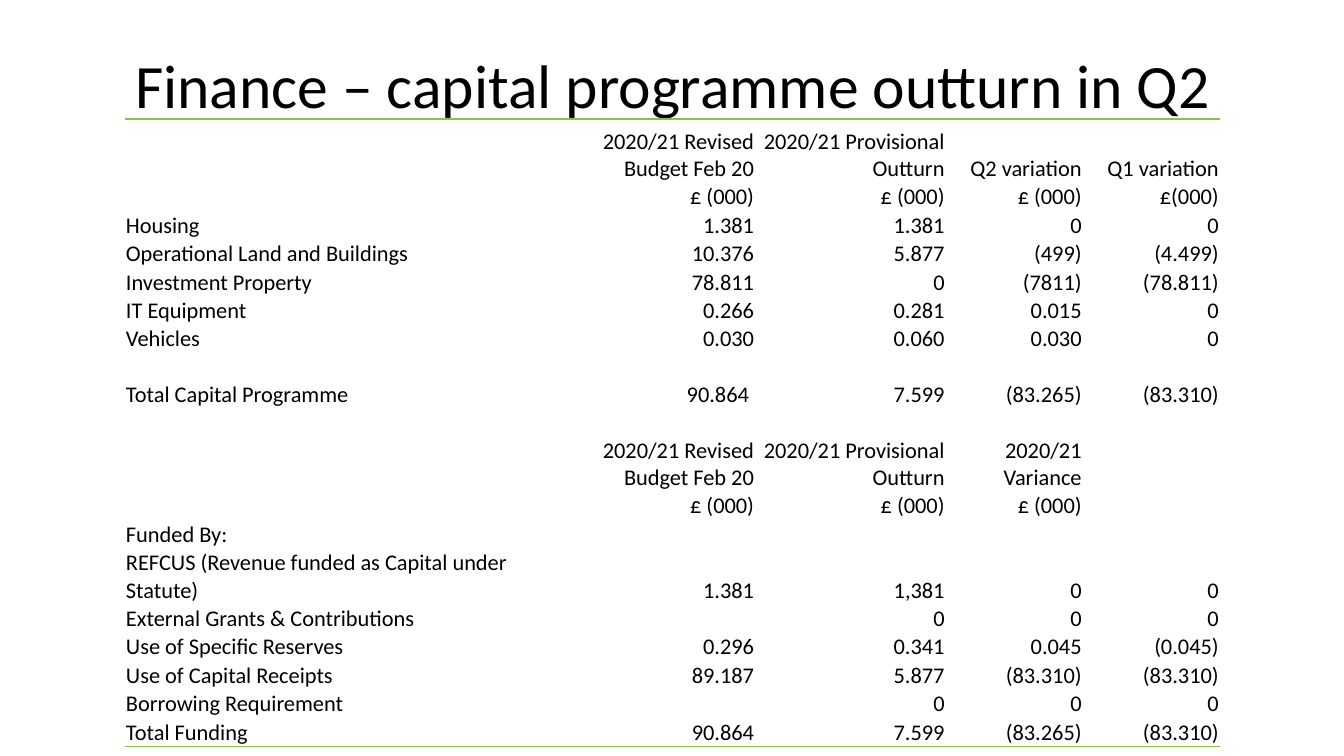
from lxml.etree import SubElement as Sub
from pptx import Presentation as Deck
from pptx.dml.color import RGBColor as RGB
from pptx.enum.text import MSO_ANCHOR as Anchor, MSO_AUTO_SIZE as Auto, PP_ALIGN as Align
from pptx.oxml import parse_xml as to_xml
from pptx.oxml.ns import nsdecls, qn
from pptx.util import Inches, Pt

BLACK = RGB(0x00, 0x00, 0x00)
GREEN = RGB(0x8B, 0xC1, 0x45)
FONT = "Calibri"
PLAIN = "{2D5ABB26-0587-4C30-8999-92F81FD0307C}"

COLS = [33.38, 13.5, 14.18, 10.2, 10.2]
LINE = 3.6
TALL = {0: 8.4, 6: 1.87, 10: 7.07, 13: 5.07}

HEAD = ["", "2020/21 Revised Budget Feb 20", "2020/21 Provisional Outturn"]
UNIT = "£ (000)"
ROWS = [
    HEAD + ["Q2 variation", "Q1 variation"],
    ["", UNIT, UNIT, UNIT, "£(000)"],
    ["Housing", "1.381", "1.381", "0", "0"],
    ["Operational Land and Buildings", "10.376", "5.877", "(499)", "(4.499)"],
    ["Investment Property", "78.811", "0", "(7811)", "(78.811)"],
    ["IT Equipment", "0.266", "0.281", "0.015", "0"],
    ["Vehicles", "0.030", "0.060", "0.030", "0"],
    [""] * 5,
    ["Total Capital Programme", "90.864 ", "7.599", "(83.265)", "(83.310)"],
    [""] * 5,
    HEAD + ["2020/21 Variance", ""],
    ["", UNIT, UNIT, UNIT, ""],
    ["Funded By:", "", "", "", ""],
    ["REFCUS (Revenue funded as Capital under Statute)", "1.381", "1,381", "0", "0"],
    ["External Grants & Contributions", "", "0", "0", "0"],
    ["Use of Specific Reserves", "0.296", "0.341", "0.045", "(0.045)"],
    ["Use of Capital Receipts", "89.187", "5.877", "(83.310)", "(83.310)"],
    ["Borrowing Requirement", "", "0", "0", "0"],
    ["Total Funding", "90.864", "7.599", "(83.265)", "(83.310)"],
]


def put(item, form):
    """Set each format value on the item."""
    for name, value in form.items():
        setattr(item, name, value)


class Page:
    """A slide on a grid of 100 columns and 100 rows, with its text style."""

    def __init__(self, deck):
        """Add a title-only slide to the deck."""
        self.wide, self.high = deck.slide_width, deck.slide_height
        self.slide = deck.slides.add_slide(deck.slide_layouts[5])

    def x(self, cols):
        """Turn grid columns into a length."""
        return round(self.wide * cols / 100)

    def y(self, rows):
        """Turn grid rows into a length."""
        return round(self.high * rows / 100)

    def text(self, para, words, size, form):
        """Put one styled run in a paragraph."""
        put(para, form)
        run = para.add_run()
        run.text = words
        put(run.font, {"name": FONT, "size": Pt(size)})
        run.font.color.rgb = BLACK

    def title(self, words, left, top, wide, high):
        """Place and fill the title."""
        box = self.slide.shapes.title
        put(box, {"left": self.x(left), "top": self.y(top),
                  "width": self.x(wide), "height": self.y(high)})
        put(box.text_frame, {"vertical_anchor": Anchor.MIDDLE, "word_wrap": True,
                             "auto_size": Auto.NONE})
        self.text(box.text_frame.paragraphs[0], words, 44,
                  {"alignment": Align.LEFT, "line_spacing": 0.9})

    def rule(self, cell, side):
        """Draw a thin green border on one side of a cell."""
        line = to_xml(
            f'<a:ln{side} {nsdecls("a")} w="12700"><a:solidFill>'
            f'<a:srgbClr val="{GREEN}"/></a:solidFill></a:ln{side}>')
        cell._tc.get_or_add_tcPr().insert(0, line)

    def cell(self, cell, words, align):
        """Format and fill one table cell."""
        edge = Inches(0.01)
        put(cell, {"vertical_anchor": Anchor.BOTTOM, "margin_left": edge,
                   "margin_right": edge, "margin_top": edge, "margin_bottom": 0})
        cell.fill.background()
        para = cell.text_frame.paragraphs[0]
        if words:
            self.text(para, words, 16, {"alignment": align})
        else:
            Sub(para._p, qn("a:endParaRPr"), sz="1200")

    def table(self, rows, left, top, cols, highs):
        """Add a plain table ruled at its top and bottom."""
        frame = self.slide.shapes.add_table(
            len(rows), len(cols), self.x(left), self.y(top), self.x(sum(cols)), self.y(sum(highs)))
        grid = frame.table
        put(grid, {"first_row": False, "horz_banding": False})
        grid._tbl.tblPr.find(qn("a:tableStyleId")).text = PLAIN
        for col, wide in zip(grid.columns, cols):
            col.width = self.x(wide)
        for row, high, line in zip(grid.rows, highs, rows):
            row.height = self.y(high)
            for i, (cell, words) in enumerate(zip(row.cells, line)):
                self.cell(cell, words, Align.RIGHT if i else Align.LEFT)
        for i in range(len(cols)):
            self.rule(grid.cell(0, i), "T")
            self.rule(grid.cell(len(rows) - 1, i), "B")


def main():
    """Build and save the slide."""
    deck = Deck()
    put(deck, {"slide_width": Inches(13.33), "slide_height": Inches(7.5)})
    page = Page(deck)
    page.title("Finance – capital programme outturn in Q2", 9.3, 2, 86.25, 19.33)
    highs = [TALL.get(i, LINE) for i in range(len(ROWS))]
    page.table(ROWS, 9.3, 15.73, COLS, highs)
    deck.save("out.pptx")


if __name__ == "__main__":
    main()
